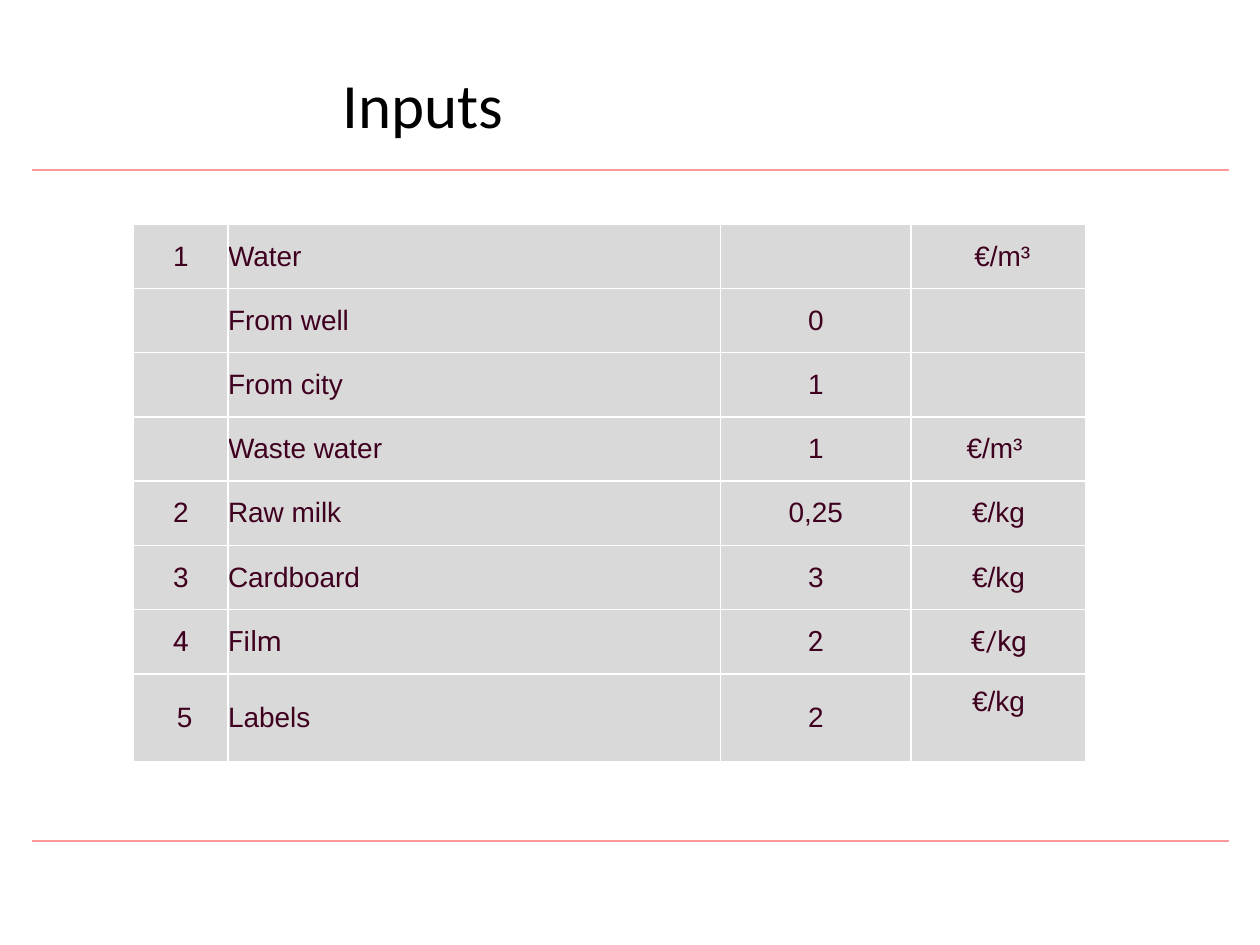
from lxml import etree
from pptx import Presentation
from pptx import util as u
from pptx.dml.color import RGBColor
from pptx.enum import shapes, text
from pptx.oxml import ns

WIDTH, HEIGHT = u.Inches(10), u.Inches(7.5)
BLACK = RGBColor(0x00, 0x00, 0x00)
WHITE = RGBColor(0xFF, 0xFF, 0xFF)
PINK = RGBColor(0xFF, 0x99, 0x99)
GREY = RGBColor(0xD9, 0xD9, 0xD9)
PLUM = RGBColor(0x3F, 0x00, 0x20)

NO_MARGINS = {f"margin_{side}": 0 for side in ("left", "top", "right", "bottom")}
COLUMNS = [0.75, 3.91, 1.51, 1.39]
ROWS = [0.51] * 7 + [0.7]
INPUTS = [
    ("1", "Water", "", " €/m³"),
    ("", "From well", "0", ""),
    ("", "From city", "1", ""),
    ("", "Waste water", "1", "€/m³ "),
    ("2", "Raw milk", "0,25", "€/kg"),
    ("3", "Cardboard", "3", "€/kg"),
    ("4", "Film", "2", "€/kg"),
    ("\u00a05", "Labels", "2", "€/kg"),
]
NAME_COLUMN = 1
ROBOTO_ROW = 6


def apply(target, values):
    for name, value in values.items():
        setattr(target, name, value)


def write(paragraph, words, color, **font):
    run = paragraph.add_run()
    run.text = words
    apply(run.font, font)
    run.font.color.rgb = color


def add_rule(slide, share):
    """Draw a horizontal line at a share of the slide's height."""
    margin, y = int(WIDTH * 0.025), int(HEIGHT * share)
    rule = slide.shapes.add_connector(
        shapes.MSO_CONNECTOR.STRAIGHT, margin, y, WIDTH - margin, y)
    rule.line.color.rgb = PINK
    rule.line.width = u.Pt(1)
    etree.SubElement(rule._element.spPr, ns.qn("a:effectLst"))


def add_title(slide, words):
    box = slide.shapes.add_textbox(
        u.Inches(2.72), u.Inches(0.48), u.Inches(7), u.Inches(0.68))
    apply(box.text_frame, {**NO_MARGINS, "word_wrap": True,
                           "vertical_anchor": text.MSO_ANCHOR.MIDDLE})
    write(box.text_frame.paragraphs[0], words, BLACK,
          name="Calibri", size=u.Pt(36))


def add_borders(cell):
    properties = cell._tc.get_or_add_tcPr()
    for index, side in enumerate(("lnL", "lnR", "lnT", "lnB")):
        line = etree.Element(ns.qn(f"a:{side}"), w=str(u.Pt(1)))
        fill = etree.SubElement(line, ns.qn("a:solidFill"))
        etree.SubElement(fill, ns.qn("a:srgbClr"), val=str(WHITE))
        properties.insert(index, line)


def fill_cell(cell, words, alignment, font):
    apply(cell, {**NO_MARGINS, "vertical_anchor": text.MSO_ANCHOR.MIDDLE})
    cell.fill.solid()
    cell.fill.fore_color.rgb = GREY
    add_borders(cell)
    paragraph = cell.text_frame.paragraphs[0]
    paragraph.alignment = alignment
    if words:
        write(paragraph, words, PLUM, name=font, size=u.Pt(16))


def add_inputs_table(slide):
    table = slide.shapes.add_table(
        len(ROWS), len(COLUMNS), u.Inches(1.06), u.Inches(1.78),
        u.Inches(sum(COLUMNS)), u.Inches(sum(ROWS))).table
    apply(table, {"first_row": False, "horz_banding": False})
    for column, width in zip(table.columns, COLUMNS):
        column.width = u.Inches(width)
    for row, height in zip(table.rows, ROWS):
        row.height = u.Inches(height)
    for i, values in enumerate(INPUTS):
        font = "Roboto" if i == ROBOTO_ROW else "Arial"
        for j, words in enumerate(values):
            alignment = (text.PP_ALIGN.LEFT if j == NAME_COLUMN
                         else text.PP_ALIGN.CENTER)
            fill_cell(table.cell(i, j), words, alignment, font)
    # The last unit sits above the middle of its cell
    table.cell(len(ROWS) - 1, len(COLUMNS) - 1).margin_bottom = u.Inches(0.25)


def main():
    presentation = Presentation()
    apply(presentation, {"slide_width": WIDTH, "slide_height": HEIGHT})
    slide = presentation.slides.add_slide(presentation.slide_layouts[6])

    # Rules above and below the content
    for share in (0.18, 0.89):
        add_rule(slide, share)

    # Title and table
    add_title(slide, "Inputs")
    add_inputs_table(slide)

    presentation.save("out.pptx")


if __name__ == "__main__":
    main()
